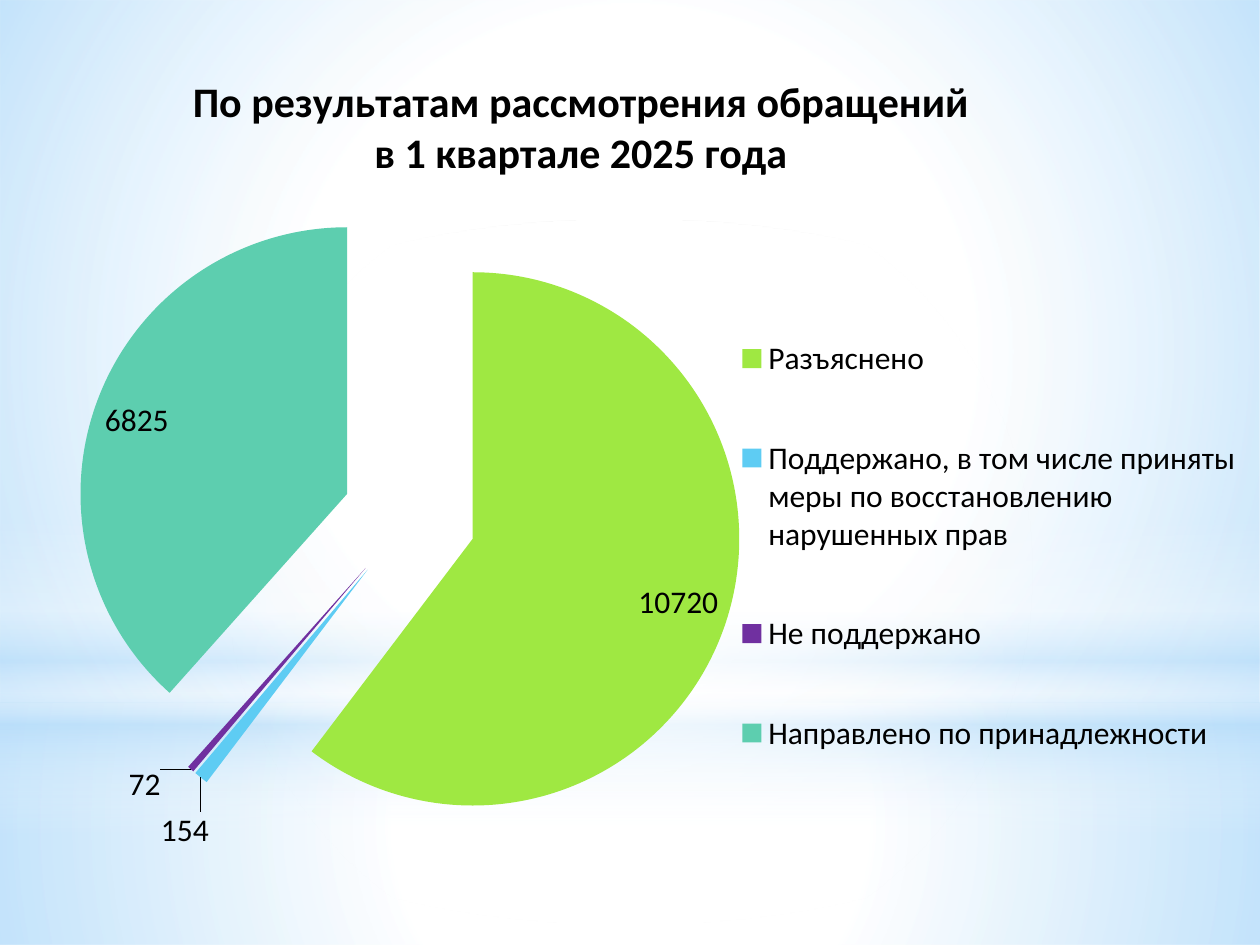
from dataclasses import dataclass

from lxml.etree import SubElement, fromstring
from pptx import Presentation
from pptx.chart.data import CategoryChartData
from pptx.dml.color import RGBColor
from pptx.enum.chart import XL_CHART_TYPE, XL_LABEL_POSITION, XL_LEGEND_POSITION
from pptx.enum.shapes import MSO_SHAPE
from pptx.enum.text import PP_ALIGN
from pptx.oxml.ns import nsdecls, qn
from pptx.util import Pt

PX = 914400 / 126  # EMU per pixel
WIDTH, HEIGHT = 1260, 945


@dataclass(frozen=True)
class Theme:
    font: str = "Calibri"
    text: str = "000000"
    white: str = "FFFFFF"
    sky: str = "B4DCFA"
    lime: str = "9FE842"
    blue: str = "5ECCF3"
    purple: str = "7030A0"
    mint: str = "5DCEAF"
    title_size: int = 24
    body_size: int = 18


def px(length):
    return round(length * PX)


def set_layout(parent, index, box, inner=False):
    """Give a chart part a manual layout, in fractions of the chart."""
    for old in parent.findall(qn("c:layout")):
        parent.remove(old)
    layout = fromstring(f"<c:layout {nsdecls('c')}/>")
    parent.insert(index, layout)
    manual = SubElement(layout, qn("c:manualLayout"))
    if inner:
        SubElement(manual, qn("c:layoutTarget"), val="inner")
    for mode in ("xMode", "yMode"):
        SubElement(manual, qn(f"c:{mode}"), val="edge")
    for key, value in zip("xywh", box):
        SubElement(manual, qn(f"c:{key}"), val=str(value))
    return manual


class SlideBuilder:
    def __init__(self, slide, theme):
        self.slide = slide
        self.theme = theme

    def style(self, font, size, bold=False):
        font.name = self.theme.font
        font.size = Pt(size)
        font.bold = bold
        font.color.rgb = RGBColor.from_string(self.theme.text)

    def glow(self, kind, box, stops, angle=None):
        """Add a gradient shape; stops are (position %, colour, opacity %)."""
        glow = self.slide.shapes.add_shape(kind, *map(px, box))
        glow.shadow.inherit = False
        glow.line.fill.background()
        glow.fill.background()
        gradient = fromstring(f'<a:gradFill {nsdecls("a")} rotWithShape="1"/>')
        stop_list = SubElement(gradient, qn("a:gsLst"))
        for position, color, opacity in stops:
            stop = SubElement(stop_list, qn("a:gs"), pos=str(position * 1000))
            paint = SubElement(stop, qn("a:srgbClr"), val=color)
            SubElement(paint, qn("a:alpha"), val=str(opacity * 1000))
        if angle is None:
            path = SubElement(gradient, qn("a:path"), path="circle")
            SubElement(path, qn("a:fillToRect"), l="50000", t="50000", r="50000", b="50000")
        else:
            SubElement(gradient, qn("a:lin"), ang=str(angle * 60000), scaled="0")
        properties = glow._element.spPr
        properties.replace(properties.find(qn("a:noFill")), gradient)

    def pie(self, box, results, plot_box):
        """Add an exploded pie; results are (name, value, colour, label shift)."""
        data = CategoryChartData()
        data.categories = [name for name, *_ in results]
        data.add_series("Series 1", [value for _, value, *_ in results])
        chart = self.slide.shapes.add_chart(XL_CHART_TYPE.PIE, *map(px, box), data).chart
        self.style(chart.font, self.theme.body_size)
        plot = chart.plots[0]
        plot.vary_by_categories = True
        set_layout(chart._chartSpace.chart.plotArea, 0, plot_box, inner=True)

        series = plot.series[0]
        series._element.find(qn("c:tx")).addnext(
            fromstring(f'<c:explosion {nsdecls("c")} val="25"/>'))
        series.data_labels.show_value = True
        self.style(series.data_labels.font, self.theme.body_size)
        for index, (_, _, color, shift) in enumerate(results):
            point = series.points[index]
            point.format.fill.solid()
            point.format.fill.fore_color.rgb = RGBColor.from_string(color)
            label = point.data_label
            self.style(label.font, self.theme.body_size)
            label.position = (XL_LABEL_POSITION.OUTSIDE_END if shift
                              else XL_LABEL_POSITION.INSIDE_END)
            if shift:
                manual = set_layout(series.data_labels._element[index], 1, shift)
                for mode in manual.findall(qn("c:xMode")) + manual.findall(qn("c:yMode")):
                    manual.remove(mode)
        return chart

    def chart_title(self, chart, lines, corner):
        title = chart.chart_title
        frame = title.text_frame
        frame.text = "\n".join(lines)
        for paragraph in frame.paragraphs:
            paragraph.alignment = PP_ALIGN.CENTER
            self.style(paragraph.font, self.theme.title_size, bold=True)
        set_layout(title._element, 1, corner)
        title._element.find(qn("c:overlay")).set("val", "1")

    def legend(self, chart, box):
        chart.has_legend = True
        legend = chart.legend
        legend.position = XL_LEGEND_POSITION.RIGHT
        legend.include_in_layout = False
        self.style(legend.font, self.theme.body_size)
        set_layout(legend._element, 1, box)


def main():
    theme = Theme()
    deck = Presentation()
    deck.slide_width, deck.slide_height = px(WIDTH), px(HEIGHT)
    builder = SlideBuilder(deck.slides.add_slide(deck.slide_layouts[6]), theme)

    # Background glows
    white, sky = theme.white, theme.sky
    horizon = 703
    builder.glow(MSO_SHAPE.RECTANGLE, (0, horizon, WIDTH, HEIGHT - horizon),
                 [(0, white, 91), (37, white, 76), (100, sky, 79)])
    builder.glow(MSO_SHAPE.RECTANGLE, (0, 0, WIDTH, horizon),
                 [(0, white, 89), (48, white, 62), (100, sky, 79)])
    builder.glow(MSO_SHAPE.RECTANGLE, (0, 519, WIDTH, 315),
                 [(0, white, 0), (29, white, 30), (45, sky, 40),
                  (55, white, 26), (65, sky, 60), (100, white, 0)], angle=90)
    builder.glow(MSO_SHAPE.OVAL, (0, 220, WIDTH, horizon),
                 [(0, white, 100), (56, white, 0)])

    # Outcomes of the appeals
    results = [
        ("Разъяснено", 10720, theme.lime, None),
        ("Поддержано, в том числе приняты меры по восстановлению нарушенных прав",
         154, theme.blue, (0.01, 0.03)),
        ("Не поддержано", 72, theme.purple, (-0.02, -0.01)),
        ("Направлено по принадлежности", 6825, theme.mint, None),
    ]
    chart = builder.pie((0, 6, WIDTH, HEIGHT - 6), results, (0.06, 0.19, 0.53, 0.71))
    builder.chart_title(chart, ["По результатам рассмотрения обращений",
                                "в 1 квартале 2025 года"], (0.15, 0.07))
    builder.legend(chart, (0.58, 0.29, 0.41, 0.57))

    deck.save("out.pptx")


if __name__ == "__main__":
    main()
